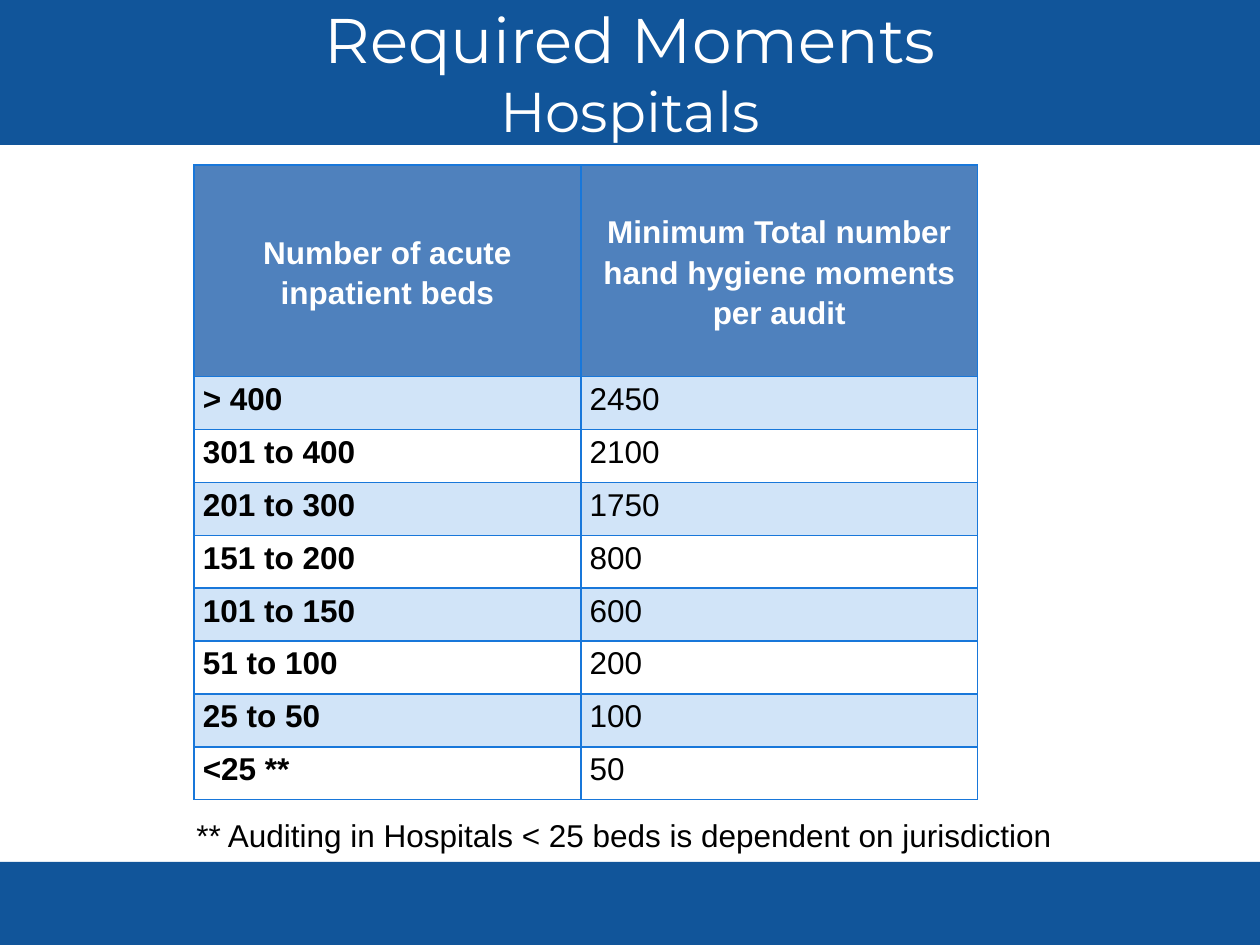
import pptx
import pptx.dml.color
import pptx.enum.shapes
import pptx.enum.text
import pptx.oxml
import pptx.oxml.ns
import pptx.util
from pptx.util import Inches

ALIGN = pptx.enum.text.PP_ALIGN
ANCHOR = pptx.enum.text.MSO_ANCHOR

AUDIT_ROWS = [
    ("> 400", "2450"),
    ("301 to 400", "2100"),
    ("201 to 300", "1750"),
    ("151 to 200", "800"),
    ("101 to 150", "600"),
    ("51 to 100", "200"),
    ("25 to 50", "100"),
    ("<25 **", "50"),
]
HEADINGS = (
    "Number of acute inpatient beds",
    "Minimum Total number hand hygiene moments per audit",
)


def rgb(value):
    return pptx.dml.color.RGBColor.from_string(value)


def write(frame, *lines, sizes=(18,), font="Arial", color="000000", bold=False,
          align=ALIGN.LEFT, spacing=None, after=None):
    """Write lines into one paragraph, parted by line breaks, one size per line."""
    frame.word_wrap = True
    paragraph = frame.paragraphs[0]
    paragraph.alignment = align
    if spacing:
        paragraph.line_spacing = spacing
    if after:
        paragraph.space_after = pptx.util.Pt(after)
    for index, (line, size) in enumerate(zip(lines, sizes)):
        if index:
            paragraph.add_line_break()
        run = paragraph.add_run()
        run.text = line
        run.font.name = font
        run.font.size = pptx.util.Pt(size)
        run.font.bold = bold
        run.font.color.rgb = rgb(color)


class AuditSlide:
    band_color = "11559A"
    heading_fill = "4F81BD"
    stripe_fill = "D1E4F8"
    border_color = "1877DA"

    def __init__(self, deck):
        self.slide = deck.slides.add_slide(deck.slide_layouts[6])

    def band(self, top, height):
        band = self.slide.shapes.add_shape(
            pptx.enum.shapes.MSO_SHAPE.RECTANGLE,
            0, Inches(top), Inches(10), Inches(height))
        band.shadow.inherit = False
        band.fill.solid()
        band.fill.fore_color.rgb = rgb(self.band_color)
        band.line.fill.background()

    def text(self, left, top, width, height, *lines, anchor=ANCHOR.TOP, **style):
        box = self.slide.shapes.add_textbox(
            Inches(left), Inches(top), Inches(width), Inches(height))
        box.text_frame.vertical_anchor = anchor
        write(box.text_frame, *lines, **style)

    def border(self, cell):
        properties = cell._tc.get_or_add_tcPr()
        for index, side in enumerate(("lnL", "lnR", "lnT", "lnB")):
            properties.insert(index, pptx.oxml.parse_xml(
                f'<a:{side} {pptx.oxml.ns.nsdecls("a")} w="12700"><a:solidFill>'
                f'<a:srgbClr val="{self.border_color}"/></a:solidFill></a:{side}>'))

    def cell(self, cell, wording, fill=None, anchor=ANCHOR.TOP, **style):
        cell.margin_left = cell.margin_right = Inches(0.07)
        cell.margin_top = cell.margin_bottom = 0
        cell.vertical_anchor = anchor
        if fill:
            cell.fill.solid()
            cell.fill.fore_color.rgb = rgb(fill)
        else:
            cell.fill.background()
        self.border(cell)
        write(cell.text_frame, wording, spacing=1.15, after=10, **style)

    def table(self, left, top, widths, heading_height, row_height, headings, rows):
        height = heading_height + row_height * len(rows)
        table = self.slide.shapes.add_table(
            len(rows) + 1, len(widths), Inches(left), Inches(top),
            Inches(sum(widths)), Inches(height)).table
        for column, width in zip(table.columns, widths):
            column.width = Inches(width)
        for row in table.rows:
            row.height = Inches(row_height)
        table.rows[0].height = Inches(heading_height)
        for column, heading in enumerate(headings):
            self.cell(table.cell(0, column), heading, fill=self.heading_fill,
                      anchor=ANCHOR.MIDDLE, align=ALIGN.CENTER,
                      color="FFFFFF", bold=True)
        for number, values in enumerate(rows, start=1):
            fill = self.stripe_fill if number % 2 else None
            for column, value in enumerate(values):
                self.cell(table.cell(number, column), value, fill=fill,
                          bold=column == 0)


def main():
    deck = pptx.Presentation()
    deck.slide_width, deck.slide_height = Inches(10), Inches(7.5)
    audit = AuditSlide(deck)
    audit.band(6.84, 0.66)
    audit.band(0, 1.15)
    audit.text(0, 0, 10, 1.14, "Required Moments", "Hospitals", sizes=(36, 32),
               font="Montserrat", color="FFFFFF", align=ALIGN.CENTER,
               anchor=ANCHOR.MIDDLE)
    audit.table(1.54, 1.31, (3.07, 3.15), 1.68, 0.42, HEADINGS, AUDIT_ROWS)
    audit.text(1.46, 6.43, 8.54, 0.4,
               "** Auditing in Hospitals < 25 beds is dependent on jurisdiction")
    deck.save("out.pptx")


if __name__ == "__main__":
    main()
